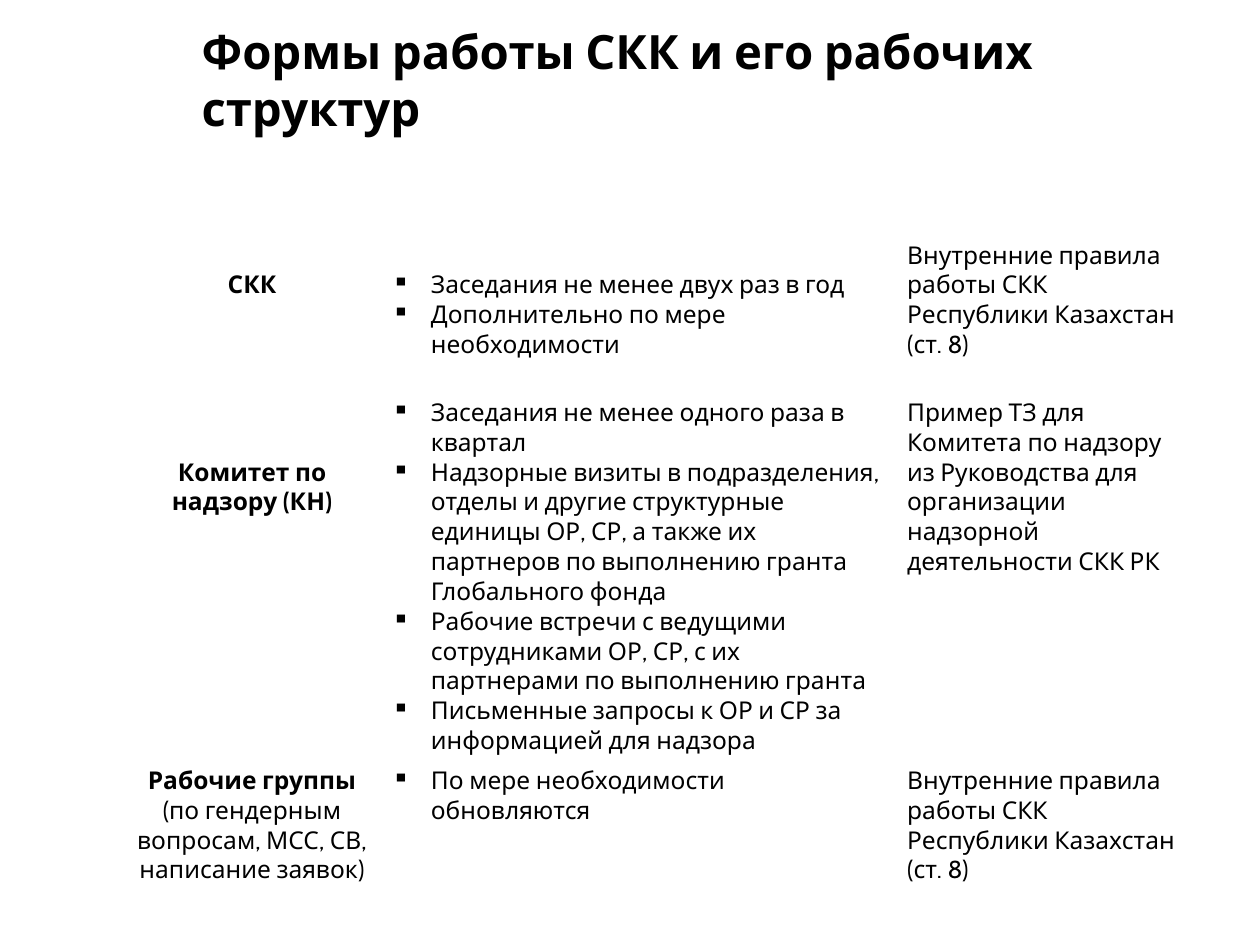
"""Builds the slide on the forms of work of the SKK and its working structures."""
from dataclasses import dataclass

from lxml.etree import SubElement
from pptx import Presentation
from pptx.dml.color import RGBColor
from pptx.enum.text import MSO_ANCHOR as Anchor, MSO_AUTO_SIZE as AutoSize, PP_ALIGN as Align
from pptx.oxml.ns import qn
from pptx.util import Inches, Pt

BLACK = RGBColor(0x00, 0x00, 0x00)
WHITE = RGBColor(0xFF, 0xFF, 0xFF)
FONT = "Cabin"
TITLE_SIZE, BODY_SIZE = 27, 14
LINE_HEIGHT = BODY_SIZE * 1.215 / 72
WIDTH, HEIGHT = 10, 7.5
COLUMN_SHARES = (0.208, 0.409, 0.237)
HEADER_BORDER, BORDER = 3, 1
RULES = "Внутренние правила работы СКК Республики Казахстан (ст. 8)"


@dataclass(frozen=True)
class Structure:
    names: tuple[str, ...]
    activities: tuple[str, ...]
    basis: str
    height: float
    name_drop: int = 0
    activity_drop: int = 0


STRUCTURES = (
    Structure(
        ("СКК",),
        ("Заседания не менее двух раз в год", "Дополнительно по мере необходимости"),
        RULES, 1.25, name_drop=1, activity_drop=1),
    Structure(
        ("Комитет по надзору (КН)",),
        ("Заседания не менее одного раза в квартал",
         "Надзорные визиты в подразделения, отделы и другие структурные единицы ОР, СР, "
         "а также их партнеров по выполнению гранта Глобального фонда",
         "Рабочие встречи с ведущими сотрудниками ОР, СР, с их партнерами по выполнению гранта",
         "Письменные запросы к ОР и СР за информацией для надзора"),
        "Пример ТЗ для Комитета по надзору из Руководства для организации надзорной "
        "деятельности СКК РК",
        2.92, name_drop=2),
    Structure(
        ("Рабочие группы", "(по гендерным вопросам, МСС, СВ, написание заявок)"),
        ("По мере необходимости обновляются",),
        RULES, 1.14),
)


def add_run(paragraph, wording: str, size: float, bold: bool = False) -> None:
    """Add one formatted run."""
    run = paragraph.add_run()
    run.text = wording
    run.font.name, run.font.size, run.font.bold = FONT, Pt(size), bold
    run.font.color.rgb = BLACK


def add_bullet(paragraph) -> None:
    """Give the paragraph a hanging square bullet."""
    properties = paragraph._p.get_or_add_pPr()
    properties.set("marL", str(Inches(0.31)))
    properties.set("indent", str(-Inches(0.31)))
    SubElement(properties, qn("a:buChar"), char="▪")


def add_borders(cell, bottom: float) -> None:
    """Outline the cell in white."""
    properties = cell._tc.get_or_add_tcPr()
    for side, width in (("L", BORDER), ("R", BORDER), ("T", BORDER), ("B", bottom)):
        border = SubElement(properties, qn(f"a:ln{side}"), w=str(Pt(width)))
        SubElement(SubElement(border, qn("a:solidFill")), qn("a:srgbClr"), val=str(WHITE))


def fill_cell(cell, wordings: tuple[str, ...], bottom: float, drop: int = 0,
              align: Align = Align.LEFT, bold_first: bool = False,
              bulleted: bool = False) -> None:
    """Write the paragraphs of a cell, lowered by a number of lines."""
    add_borders(cell, bottom)
    cell.fill.solid()
    cell.fill.fore_color.rgb = WHITE
    cell.margin_left = cell.margin_right = Inches(0.07)
    cell.margin_top = Inches(0.04 + drop * LINE_HEIGHT)
    cell.margin_bottom = Inches(0.04)
    cell.vertical_anchor = Anchor.TOP
    frame = cell.text_frame
    for index, wording in enumerate(wordings):
        paragraph = frame.add_paragraph() if index else frame.paragraphs[0]
        paragraph.alignment = align
        if bulleted:
            add_bullet(paragraph)
        add_run(paragraph, wording, BODY_SIZE, bold_first and index == 0)


def add_title(slide) -> None:
    """Place and write the title."""
    title = slide.shapes.title
    title.left, title.top = Inches(0.15 * WIDTH), Inches(0.044 * HEIGHT)
    title.width, title.height = Inches(0.788 * WIDTH), Inches(0.08 * HEIGHT)
    frame = title.text_frame
    frame.word_wrap, frame.auto_size = True, AutoSize.NONE
    frame.vertical_anchor = Anchor.MIDDLE
    frame.paragraphs[0].alignment = Align.LEFT
    add_run(frame.paragraphs[0], "Формы работы СКК и его рабочих структур", TITLE_SIZE, True)


def add_structures(slide) -> None:
    """Draw the table with one row for each structure."""
    table = slide.shapes.add_table(
        len(STRUCTURES), len(COLUMN_SHARES), Inches(0.096 * WIDTH), Inches(0.249 * HEIGHT),
        Inches(sum(COLUMN_SHARES) * WIDTH),
        Inches(sum(structure.height for structure in STRUCTURES))).table
    table.first_row = table.horz_banding = False
    for column, share in zip(table.columns, COLUMN_SHARES):
        column.width = Inches(share * WIDTH)
    for index, (row, structure) in enumerate(zip(table.rows, STRUCTURES)):
        row.height = Inches(structure.height)
        bottom = BORDER if index else HEADER_BORDER
        name, activity, basis = row.cells
        fill_cell(name, structure.names, bottom, structure.name_drop, Align.CENTER,
                  bold_first=True)
        fill_cell(activity, structure.activities, bottom, structure.activity_drop,
                  bulleted=True)
        fill_cell(basis, (structure.basis,), bottom)


def main() -> None:
    """Build and save the presentation."""
    presentation = Presentation()
    presentation.slide_width, presentation.slide_height = Inches(WIDTH), Inches(HEIGHT)
    slide = presentation.slides.add_slide(presentation.slide_layouts[5])
    add_title(slide)
    add_structures(slide)
    presentation.save("out.pptx")


if __name__ == "__main__":
    main()
